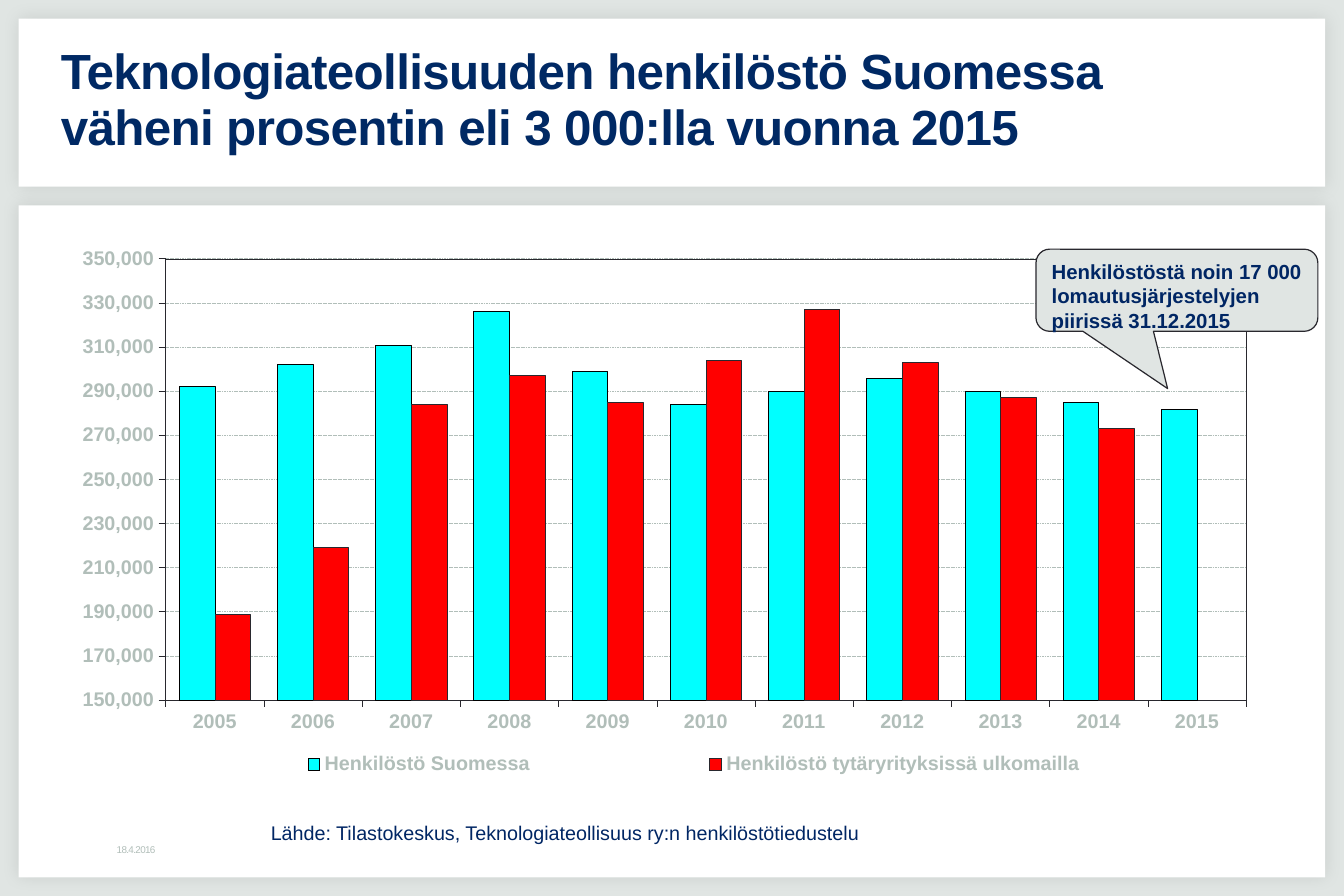
from dataclasses import dataclass

from lxml import etree
from pptx import Presentation
from pptx.chart.data import CategoryChartData
from pptx.dml.color import RGBColor
from pptx.enum.chart import XL_CHART_TYPE, XL_LEGEND_POSITION, XL_TICK_MARK
from pptx.enum.dml import MSO_LINE
from pptx.enum.shapes import MSO_SHAPE
from pptx.enum.text import MSO_ANCHOR, PP_ALIGN
from pptx.oxml import parse_xml
from pptx.oxml.ns import nsdecls, qn
from pptx.util import Inches, Pt

COLUMNS = XL_CHART_TYPE.COLUMN_CLUSTERED
LEGEND_RIGHT = XL_LEGEND_POSITION.RIGHT
TICK_OUT, TICK_NONE = XL_TICK_MARK.OUTSIDE, XL_TICK_MARK.NONE
DASH = MSO_LINE.SQUARE_DOT
RECTANGLE = MSO_SHAPE.RECTANGLE
CALLOUT = MSO_SHAPE.ROUNDED_RECTANGULAR_CALLOUT
TOP, MIDDLE = MSO_ANCHOR.TOP, MSO_ANCHOR.MIDDLE
LEFT = PP_ALIGN.LEFT

WIDTH, HEIGHT = Inches(11.34), Inches(7.56)
GRID_COLUMNS, GRID_ROWS = 72, 48

YEARS = [str(year) for year in range(2005, 2016)]
FINLAND = [292, 302, 311, 326, 299, 284, 290, 296, 290, 285, 282]
ABROAD = [189, 219, 284, 297, 285, 304, 327, 303, 287, 273, None]


@dataclass(frozen=True)
class Theme:
    """Colours, font and type sizes of the slide."""

    font: str = "Arial"
    backdrop: str = "E0E5E3"
    panel: str = "FFFFFF"
    title: str = "002964"
    text: str = "002664"
    muted: str = "B1BEB9"
    outline: str = "29282E"
    finland: str = "00FFFF"
    finland_line: str = "000000"
    abroad: str = "FF0000"
    title_size: float = 30
    callout_size: float = 12.4
    chart_size: float = 12
    source_size: float = 12
    date_size: float = 6
    hairline: float = 0.25
    callout_line: float = 0.75


THEME = Theme()


def rgb(color):
    """Turn a hex string into a colour."""
    return RGBColor.from_string(color)


def place(left, top, width, height):
    """Convert grid columns and rows to slide lengths."""
    column, row = WIDTH / GRID_COLUMNS, HEIGHT / GRID_ROWS
    return int(left * column), int(top * row), int(width * column), int(height * row)


def style_font(font, size, color, bold=False):
    """Apply the theme font with a size, colour and weight."""
    font.name, font.size, font.bold = THEME.font, Pt(size), bold
    font.color.rgb = rgb(color)


def style_line(line, color, width):
    """Give a line its colour and width."""
    line.color.rgb = rgb(color)
    line.width = Pt(width)


def write_text(box, lines, size, color, bold=False, anchor=TOP, wrap=True,
               margins=(0.04, 0.04), line_spacing=None, tracking=None):
    """Fill a shape with equally styled, left-aligned paragraphs."""
    frame = box.text_frame
    frame.word_wrap, frame.vertical_anchor = wrap, anchor
    frame.margin_left = frame.margin_right = Inches(margins[0])
    frame.margin_top = frame.margin_bottom = Inches(margins[1])
    frame.text = "\n".join(lines)
    for para in frame.paragraphs:
        para.alignment = LEFT
        if line_spacing:
            para.line_spacing = line_spacing
        style_font(para.font, size, color, bold)
        if tracking:
            para._p.pPr.find(qn("a:defRPr")).set("spc", str(tracking))


def add_text(page, area, lines, size, color, **options):
    """Add a text box on the grid."""
    write_text(page.shapes.add_textbox(*place(*area)), lines, size, color, **options)


def add_panel(page, area):
    """Add a white panel with a soft glow of shadow."""
    panel = page.shapes.add_shape(RECTANGLE, *place(*area))
    panel.fill.solid()
    panel.fill.fore_color.rgb = rgb(THEME.panel)
    panel.line.fill.background()
    panel._element.spPr.append(parse_xml(
        f'<a:effectLst {nsdecls("a")}><a:outerShdw blurRad="{Pt(10)}" dist="0" '
        'dir="2700000" algn="ctr" rotWithShape="0"><a:srgbClr val="000000">'
        '<a:alpha val="10000"/></a:srgbClr></a:outerShdw></a:effectLst>'))


def add_callout(page, area, lines):
    """Add the speech bubble that points at the last year."""
    bubble = page.shapes.add_shape(CALLOUT, *place(*area))
    bubble.shadow.inherit = False
    for index, value in enumerate((-0.033, 1.198, 0.167)):
        bubble.adjustments[index] = value
    bubble.fill.solid()
    bubble.fill.fore_color.rgb = rgb(THEME.backdrop)
    style_line(bubble.line, THEME.outline, THEME.callout_line)
    write_text(bubble, lines, THEME.callout_size, THEME.text, bold=True,
               wrap=False, margins=(0.1, 0.05))


def set_layout(parent, position, x, y, width, height, inner=False):
    """Fix a chart part at shares of the chart area."""
    for old in parent.findall(qn("c:layout")):
        parent.remove(old)
    layout = etree.Element(qn("c:layout"))
    manual = etree.SubElement(layout, qn("c:manualLayout"))
    settings = [("layoutTarget", "inner")] if inner else []
    settings += [("xMode", "edge"), ("yMode", "edge"),
                 ("x", x), ("y", y), ("w", width), ("h", height)]
    for tag, value in settings:
        etree.SubElement(manual, qn(f"c:{tag}")).set("val", str(value))
    parent.insert(position, layout)


def style_axis(axis):
    """Give an axis its ticks, line and labels."""
    axis.major_tick_mark, axis.minor_tick_mark = TICK_OUT, TICK_NONE
    style_line(axis.format.line, THEME.outline, THEME.hairline)
    style_font(axis.tick_labels.font, THEME.chart_size, THEME.muted, bold=True)


def style_value_axis(axis):
    """Set the scale, number format and gridlines."""
    style_axis(axis)
    axis.minimum_scale, axis.maximum_scale, axis.major_unit = 150000, 350000, 20000
    axis.tick_labels.number_format = "#,##0"
    axis.tick_labels.number_format_is_linked = False
    grid = axis.major_gridlines.format.line
    style_line(grid, THEME.muted, THEME.hairline)
    grid.dash_style = DASH


def style_plot(chart):
    """Set the bars and the frame of the plot."""
    plot = chart.plots[0]
    plot.gap_width, plot.overlap, plot.vary_by_categories = 75, 0, False
    looks = ((THEME.finland, THEME.finland_line), (THEME.abroad, THEME.outline))
    for series, (fill, line) in zip(plot.series, looks):
        series.invert_if_negative = False
        series.format.fill.solid()
        series.format.fill.fore_color.rgb = rgb(fill)
        style_line(series.format.line, line, THEME.hairline)
    area = chart._chartSpace.chart.plotArea
    set_layout(area, 0, 0.089, 0.062, 0.877, 0.788, inner=True)
    area.append(parse_xml(
        f'<c:spPr {nsdecls("c", "a")}><a:noFill/><a:ln w="{Pt(THEME.hairline)}">'
        f'<a:solidFill><a:srgbClr val="{THEME.outline}"/></a:solidFill></a:ln></c:spPr>'))


def add_staff_chart(page, area):
    """Add the clustered columns of staff in Finland and abroad."""
    data = CategoryChartData(number_format="#,##0")
    data.categories = YEARS
    for name, thousands in (("Henkilöstö Suomessa", FINLAND),
                            ("Henkilöstö tytäryrityksissä ulkomailla", ABROAD)):
        data.add_series(name, [value and value * 1000 for value in thousands])
    chart = page.shapes.add_chart(COLUMNS, *place(*area), data).chart
    chart.has_title = False
    style_font(chart.font, THEME.chart_size, THEME.outline, bold=True)
    style_axis(chart.category_axis)
    style_value_axis(chart.value_axis)
    style_plot(chart)
    chart.has_legend = True
    legend = chart.legend
    legend.position, legend.include_in_layout = LEGEND_RIGHT, False
    style_font(legend.font, THEME.chart_size, THEME.muted, bold=True)
    set_layout(legend._element, 1, 0.064, 0.937, 0.908, 0.055)


def main():
    """Build the slide and save the deck."""
    deck = Presentation()
    deck.slide_width, deck.slide_height = WIDTH, HEIGHT
    page = deck.slides.add_slide(deck.slide_layouts[6])
    page.background.fill.solid()
    page.background.fill.fore_color.rgb = rgb(THEME.backdrop)
    add_panel(page, (1, 1, 70, 9))
    add_panel(page, (1, 11, 70, 36))
    add_text(page, (6, 45, 9, 1), ["18.4.2016"], THEME.date_size, THEME.muted,
             anchor=MIDDLE, tracking=-40)
    add_text(page, (3, 1.9, 63, 7),
             ["Teknologiateollisuuden henkilöstö Suomessa väheni prosentin eli 3 000:lla vuonna 2015"],
             THEME.title_size, THEME.title, bold=True, anchor=MIDDLE,
             margins=(0.04, 0.05), line_spacing=0.95, tracking=-40)
    add_staff_chart(page, (3, 12, 66, 30))
    add_text(page, (14, 43.7, 38, 1.8),
             ["Lähde: Tilastokeskus, Teknologiateollisuus ry:n henkilöstötiedustelu"],
             THEME.source_size, THEME.text, margins=(0.08, 0.04))
    add_callout(page, (55.5, 13.35, 15.1, 4.4),
                ["Henkilöstöstä noin 17 000", "lomautusjärjestelyjen", "piirissä 31.12.2015"])
    deck.save("out.pptx")


if __name__ == "__main__":
    main()
